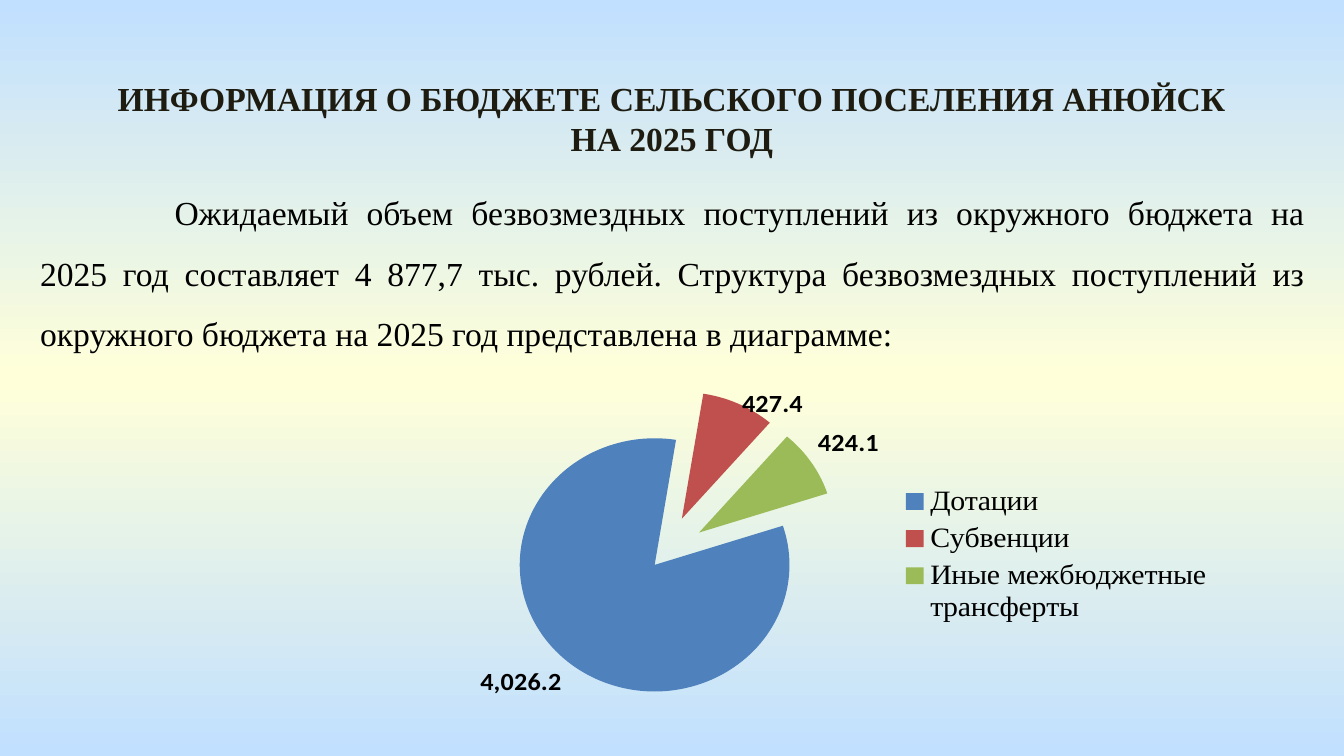
import copy
from dataclasses import dataclass

import pptx
import pptx.chart.data
import pptx.dml.color
import pptx.enum.chart
import pptx.enum.text
import pptx.oxml
import pptx.oxml.ns
import pptx.util

Inches = pptx.util.Inches
Pt = pptx.util.Pt
Align = pptx.enum.text.PP_ALIGN
qn = pptx.oxml.ns.qn

COLORS = {
    "sky": "C1E0FF",
    "cream": "FFFFD9",
    "heading": "1E1C11",
    "text": "000000",
    "blue": "4F81BD",
    "red": "C0504D",
    "green": "9BBB59",
}
SERIF = "Times New Roman"
SANS = "Calibri"


@dataclass
class Run:
    text: str
    font: str = SERIF
    color: str = "text"
    bold: bool = False


@dataclass
class TextBlock:
    box: tuple[float, float, float, float]
    align: Align
    runs: list[Run]
    line_spacing: float | None = None
    tab_stop: float | None = None


@dataclass
class Transfer:
    name: str
    amount: float
    color: str
    explosion: int


TEXT_BLOCKS = [
    TextBlock((0.75, 0.53, 8.5, 0.71), Align.CENTER, [
        Run("ИНФОРМАЦИЯ О БЮДЖЕТЕ СЕЛЬСКОГО ПОСЕЛЕНИЯ АНЮЙСК НА 2025 ГОД",
            color="heading", bold=True),
    ]),
    TextBlock((0.2, 1.23, 9.61, 1.46), Align.JUSTIFY, [
        Run("\t", font=SANS),
        Run("Ожидаемый объем безвозмездных поступлений из окружного бюджета "
            "на 2025 год составляет 4 877,7 тыс. рублей. Структура "
            "безвозмездных поступлений из окружного бюджета на 2025 год "
            "представлена в диаграмме:"),
    ], line_spacing=1.5, tab_stop=1),
]

TRANSFERS = [
    Transfer("Дотации", 4026.2, "blue", 11),
    Transfer("Субвенции", 427.4, "red", 31),
    Transfer("Иные межбюджетные трансферты", 424.1, "green", 31),
]


def rgb(color: str) -> pptx.dml.color.RGBColor:
    return pptx.dml.color.RGBColor.from_string(COLORS[color])


def chart_xml(tag: str, attributes: str = "", content: str = ""):
    namespace = pptx.oxml.ns.nsdecls("c")
    return pptx.oxml.parse_xml(
        f"<c:{tag} {namespace} {attributes}>{content}</c:{tag}>")


def style_font(font, name: str, size: float, color: str, bold: bool = False) -> None:
    font.name = name
    font.size = Pt(size)
    font.bold = bold
    font.color.rgb = rgb(color)


def paint_background(slide) -> None:
    fill = slide.background.fill
    fill.gradient()
    fill.gradient_angle = 90
    stops = slide.element.find(".//" + qn("a:gsLst"))
    stops.insert(1, copy.deepcopy(stops[0]))
    for stop, position, color in zip(
        fill.gradient_stops, (0, 0.5, 1), ("sky", "cream", "sky")
    ):
        stop.position = position
        stop.color.rgb = rgb(color)


def add_text(slide, block: TextBlock) -> None:
    frame = slide.shapes.add_textbox(*map(Inches, block.box)).text_frame
    frame.word_wrap = True
    frame.auto_size = pptx.enum.text.MSO_AUTO_SIZE.SHAPE_TO_FIT_TEXT
    paragraph = frame.paragraphs[0]
    paragraph.alignment = block.align
    paragraph.line_spacing = block.line_spacing
    if block.tab_stop:
        namespace = pptx.oxml.ns.nsdecls("a")
        paragraph._p.get_or_add_pPr().append(pptx.oxml.parse_xml(
            f'<a:tabLst {namespace}>'
            f'<a:tab pos="{Inches(block.tab_stop)}" algn="l"/></a:tabLst>'))
    for part in block.runs:
        run = paragraph.add_run()
        run.text = part.text
        style_font(run.font, part.font, 18, part.color, part.bold)


def set_pie_geometry(chart, start: int, explosion: int) -> None:
    """Set the plot layout, first slice angle and slice separation."""
    plot_area = chart.element.find(".//" + qn("c:plotArea"))
    for old_layout in plot_area.findall(qn("c:layout")):
        plot_area.remove(old_layout)
    plot_area.insert(0, chart_xml("layout", content=(
        '<c:manualLayout><c:layoutTarget val="inner"/>'
        '<c:xMode val="edge"/><c:yMode val="edge"/>'
        '<c:x val="0.32"/><c:y val="0"/><c:w val="0.345"/><c:h val="1"/>'
        "</c:manualLayout>")))
    pie = plot_area.find(qn("c:pieChart"))
    for old_angle in pie.findall(qn("c:firstSliceAng")):
        pie.remove(old_angle)
    pie.append(chart_xml("firstSliceAng", f'val="{start}"'))
    pie.find(qn("c:ser")).find(qn("c:tx")).addnext(
        chart_xml("explosion", f'val="{explosion}"'))


def add_transfer_pie(slide, transfers: list[Transfer]) -> None:
    data = pptx.chart.data.CategoryChartData(number_format="#,##0.0")
    data.categories = [transfer.name for transfer in transfers]
    data.add_series("Series 1", [transfer.amount for transfer in transfers])
    chart = slide.shapes.add_chart(
        pptx.enum.chart.XL_CHART_TYPE.PIE,
        *map(Inches, (0.88, 2.73, 8.25, 2.63)), data).chart
    chart.has_title = False
    style_font(chart.font, SANS, 18, "text")
    set_pie_geometry(chart, start=72, explosion=31)

    # Legend
    chart.has_legend = True
    chart.legend.position = pptx.enum.chart.XL_LEGEND_POSITION.RIGHT
    chart.legend.include_in_layout = False
    style_font(chart.legend.font, SERIF, 16, "text")

    # Slices
    pie = chart.plots[0]
    pie.vary_by_categories = True
    series = pie.series[0]
    for index, transfer in enumerate(transfers):
        slice_fill = series.points[index].format.fill
        slice_fill.solid()
        slice_fill.fore_color.rgb = rgb(transfer.color)
    for point, transfer in zip(series._element.findall(qn("c:dPt")), transfers):
        point.find(qn("c:spPr")).addprevious(
            chart_xml("explosion", f'val="{transfer.explosion}"'))

    # Values beside the slices
    labels = series.data_labels
    labels.show_value = True
    labels.number_format = "#,##0.0"
    labels.number_format_is_linked = False
    labels.position = pptx.enum.chart.XL_LABEL_POSITION.OUTSIDE_END
    style_font(labels.font, SANS, 14, "text", bold=True)


def main() -> None:
    deck = pptx.Presentation()
    deck.slide_width = Inches(10)
    deck.slide_height = Inches(5.625)
    slide = deck.slides.add_slide(deck.slide_layouts[6])
    paint_background(slide)
    for block in TEXT_BLOCKS:
        add_text(slide, block)
    add_transfer_pie(slide, TRANSFERS)
    deck.save("out.pptx")


if __name__ == "__main__":
    main()
